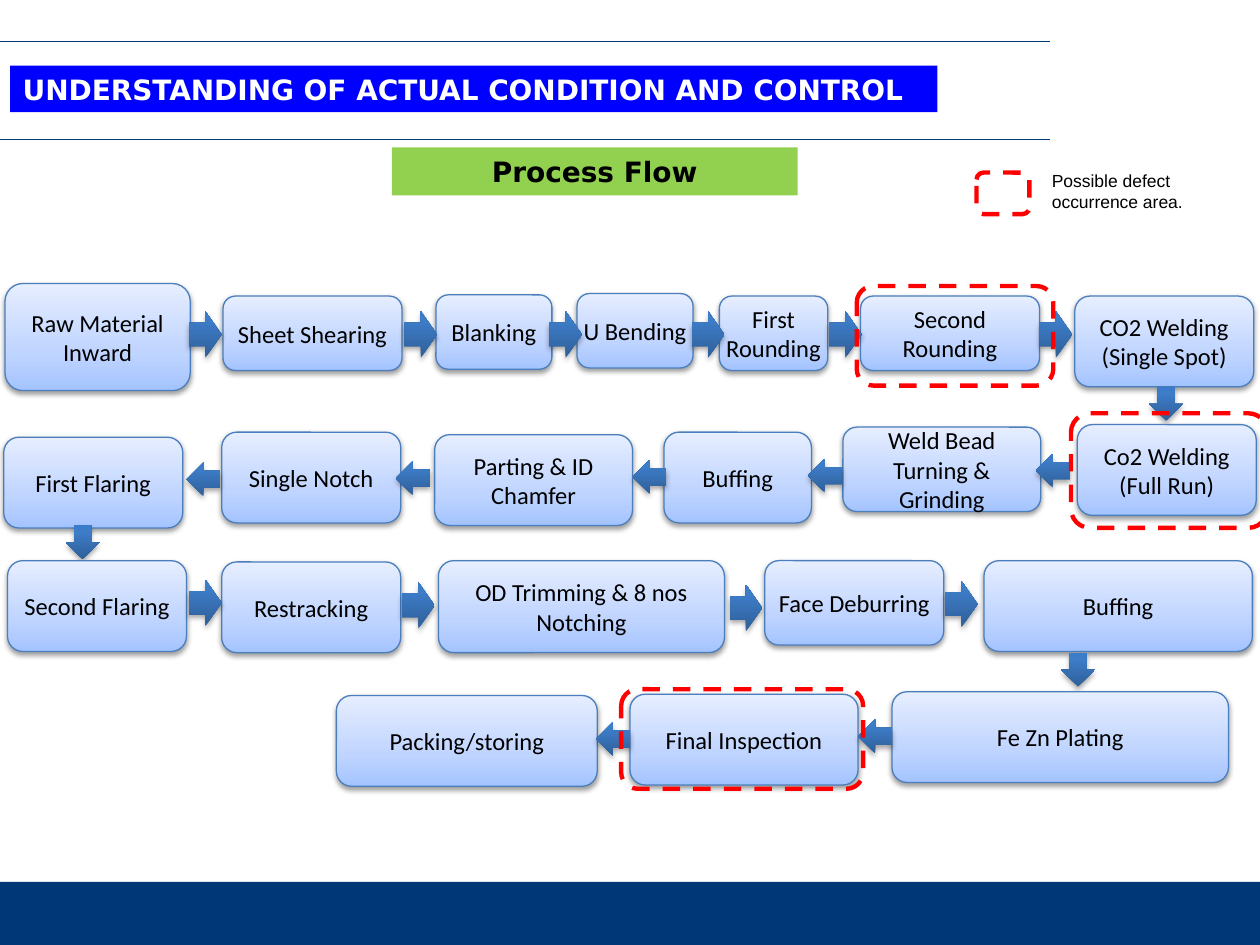
from lxml import etree
from pptx import Presentation
from pptx import util as u
from pptx.dml.color import RGBColor
from pptx.enum import dml, shapes, text
from pptx.oxml import ns

COLORS = {
    "navy": "003777", "title": "0000FF", "heading": "92D050", "defect": "FF0000",
    "outline": "4B7EBC", "white": "FFFFFF", "black": "000000",
}
STEP_STOPS = [(0, "A4C4FF"), (35, "BFD4FF"), (100, "E6EEFF")]
ARROW_STOPS = [(0, "2F5F99"), (80, "3D7CC7"), (100, "3A7CCB")]

SLIDE_WIDTH, SLIDE_HEIGHT = u.Inches(10), u.Inches(7.5)
COLUMN, ROW = SLIDE_WIDTH / 10, SLIDE_HEIGHT / 7.5
RIGHT, DOWN, LEFT = 0, 90, 180
ARROW_SIZES = {RIGHT: (0.26, 0.37), DOWN: (0.27, 0.27), LEFT: (0.27, 0.27)}

# Each flow row: its top, its steps (label, left, drop, width, height),
# and its arrows (direction, left, drop); drops are measured from the row's top.
FLOW_ROWS = [
    (2.25,
     [("Raw Material Inward", 0.04, 0, 1.47, 0.85),
      ("Sheet Shearing", 1.77, 0.1, 1.42, 0.59),
      ("Blanking", 3.46, 0.09, 0.92, 0.59),
      ("U Bending", 4.58, 0.08, 0.92, 0.59),
      ("First Rounding", 5.71, 0.1, 0.86, 0.59),
      ("Second Rounding", 6.83, 0.1, 1.42, 0.59),
      ("CO2 Welding\n(Single Spot)", 8.53, 0.1, 1.42, 0.72)],
     [(RIGHT, left, 0.22) for left in (1.5, 3.21, 4.36, 5.49, 6.58, 8.25)]
     + [(DOWN, 9.12, 0.82)]),
    (3.37,
     [("Co2 Welding\n(Full Run)", 8.55, 0, 1.42, 0.72),
      ("Weld Bead Turning & Grinding", 6.69, 0.02, 1.57, 0.67),
      ("Buffing", 5.27, 0.06, 1.17, 0.72),
      ("Parting & ID Chamfer", 3.45, 0.08, 1.57, 0.72),
      ("Single Notch", 1.76, 0.06, 1.42, 0.72),
      ("First Flaring", 0.03, 0.1, 1.42, 0.72)],
     [(LEFT, 8.22, 0.23), (LEFT, 6.41, 0.27), (LEFT, 5.02, 0.28),
      (LEFT, 3.14, 0.29), (LEFT, 1.48, 0.3), (DOWN, 0.52, 0.8)]),
    (4.45,
     [("Second Flaring", 0.06, 0, 1.42, 0.72),
      ("Restracking", 1.76, 0.01, 1.42, 0.72),
      ("OD Trimming & 8 nos Notching", 3.48, 0, 2.27, 0.73),
      ("Face Deburring", 6.07, 0, 1.42, 0.67),
      ("Buffing", 7.81, 0, 2.13, 0.72)],
     [(RIGHT, 1.5, 0.15), (RIGHT, 3.19, 0.17), (RIGHT, 5.79, 0.19),
      (RIGHT, 7.5, 0.16), (DOWN, 8.42, 0.73)]),
    (5.49,
     [("Fe Zn Plating", 7.08, 0, 2.67, 0.72),
      ("Final Inspection", 5, 0.02, 1.81, 0.72),
      ("Packing/storing", 2.67, 0.03, 2.07, 0.72)],
     [(LEFT, 6.81, 0.22), (LEFT, 4.73, 0.24)]),
]
DEFECT_AREAS = [(6.8, 2.27, 1.56, 0.79), (8.5, 3.28, 1.56, 0.91), (4.93, 5.47, 1.92, 0.79)]


def color(name):
    return RGBColor.from_string(COLORS[name])


def place(box):
    """Turn left, top, width, height in columns and rows into slide lengths."""
    left, top, width, height = box
    return int(left * COLUMN), int(top * ROW), int(width * COLUMN), int(height * ROW)


def add_preset(slide, kind, box):
    shape = slide.shapes.add_shape(kind, *place(box))
    shape.shadow.inherit = False
    return shape


def write(shape, label, font_name, size, font_color, align, bold=False, inset=None):
    frame = shape.text_frame
    frame.word_wrap = True
    frame.auto_size = text.MSO_AUTO_SIZE.NONE
    frame.vertical_anchor = text.MSO_ANCHOR.MIDDLE
    if inset is not None:
        frame.margin_left = frame.margin_right = inset
        frame.margin_top = frame.margin_bottom = inset
    for index, line in enumerate(label.split("\n")):
        paragraph = frame.paragraphs[0] if index == 0 else frame.add_paragraph()
        paragraph.alignment = align
        run = paragraph.add_run()
        run.text = line
        run.font.name, run.font.size, run.font.bold = font_name, u.Pt(size), bold
        run.font.color.rgb = color(font_color)


def fill_plain(shape, name):
    shape.fill.solid()
    shape.fill.fore_color.rgb = color(name)
    shape.line.fill.background()


def fill_raised(shape, stops, shadow_percent, distance):
    """Give a bottom-to-top gradient and a soft shadow below."""
    shape.fill.gradient()
    shape.fill.gradient_angle = 90
    properties = shape._element.spPr
    properties.find(ns.qn("a:gradFill")).set("rotWithShape", "0")
    stop_list = properties.find(".//" + ns.qn("a:gsLst"))
    for stop in list(stop_list):
        stop_list.remove(stop)
    for percent, value in stops:
        stop = etree.SubElement(stop_list, ns.qn("a:gs"), pos=str(percent * 1000))
        etree.SubElement(stop, ns.qn("a:srgbClr"), val=value)
    shadow = etree.SubElement(
        properties.find(ns.qn("a:effectLst")), ns.qn("a:outerShdw"),
        blurRad=str(u.Pt(3.1)), dist=str(u.Pt(distance)), dir="5400000", rotWithShape="0")
    shade = etree.SubElement(shadow, ns.qn("a:srgbClr"), val=COLORS["black"])
    etree.SubElement(shade, ns.qn("a:alpha"), val=str(shadow_percent * 1000))


def add_step(slide, label, box):
    step = add_preset(slide, shapes.MSO_SHAPE.ROUNDED_RECTANGLE, box)
    fill_raised(step, STEP_STOPS, 38, 1.6)
    step.line.color.rgb = color("outline")
    step.line.width = u.Pt(0.75)
    write(step, label, "Calibri", 14, "black", text.PP_ALIGN.CENTER, inset=u.Inches(0.02))


def add_arrow(slide, direction, left, top):
    arrow = add_preset(slide, shapes.MSO_SHAPE.RIGHT_ARROW, (left, top, *ARROW_SIZES[direction]))
    arrow.rotation = direction
    arrow.line.fill.background()
    fill_raised(arrow, ARROW_STOPS, 35, 1.8)


def add_defect_area(slide, box):
    area = add_preset(slide, shapes.MSO_SHAPE.ROUNDED_RECTANGLE, box)
    area.fill.background()
    area.line.color.rgb = color("defect")
    area.line.width = u.Pt(2.5)
    area.line.dash_style = dml.MSO_LINE.DASH


def add_frame(slide):
    """Place the footer band and the two rules around the title."""
    fill_plain(add_preset(slide, shapes.MSO_SHAPE.RECTANGLE, (0, 7, 10, 0.5)), "navy")
    for height in (0.33, 1.11):
        left, top, width, _ = place((0, height, 8.33, 0))
        rule = slide.shapes.add_connector(shapes.MSO_CONNECTOR.STRAIGHT, left, top, width, top)
        rule.line.color.rgb = color("navy")
        rule.line.width = u.Pt(0.75)
        etree.SubElement(rule._element.spPr, ns.qn("a:effectLst"))


def add_headings(slide, title_box, heading_box):
    title = slide.shapes.title
    title.left, title.top, title.width, title.height = place(title_box)
    fill_plain(title, "title")
    write(title, "UNDERSTANDING OF ACTUAL CONDITION AND CONTROL", "DejaVu Sans", 16,
          "white", text.PP_ALIGN.LEFT, bold=True)
    heading = add_preset(slide, shapes.MSO_SHAPE.RECTANGLE, heading_box)
    fill_plain(heading, "heading")
    write(heading, "Process Flow", "DejaVu Sans", 16, "black", text.PP_ALIGN.CENTER, bold=True)


def add_legend(slide, box):
    left, top, width, height = box
    add_defect_area(slide, (left, top + 0.07, 0.42, 0.33))
    caption = slide.shapes.add_textbox(*place((left + 0.5, top, width - 0.5, height)))
    write(caption, "Possible defect occurrence area.", "Arial", 10, "black", text.PP_ALIGN.LEFT)


def add_flow_row(slide, top, steps, arrows):
    for label, left, drop, width, height in steps:
        add_step(slide, label, (left, top + drop, width, height))
    for direction, left, drop in arrows:
        add_arrow(slide, direction, left, top + drop)


def main():
    presentation = Presentation()
    presentation.slide_width, presentation.slide_height = SLIDE_WIDTH, SLIDE_HEIGHT
    slide = presentation.slides.add_slide(presentation.slide_layouts[5])
    add_frame(slide)
    add_headings(slide, (0.08, 0.52, 7.36, 0.37), (3.11, 1.17, 3.22, 0.38))
    add_legend(slide, (7.75, 1.3, 1.83, 0.44))
    for top, steps, arrows in FLOW_ROWS:
        add_flow_row(slide, top, steps, arrows)
    for box in DEFECT_AREAS:
        add_defect_area(slide, box)
    presentation.save("out.pptx")


if __name__ == "__main__":
    main()
